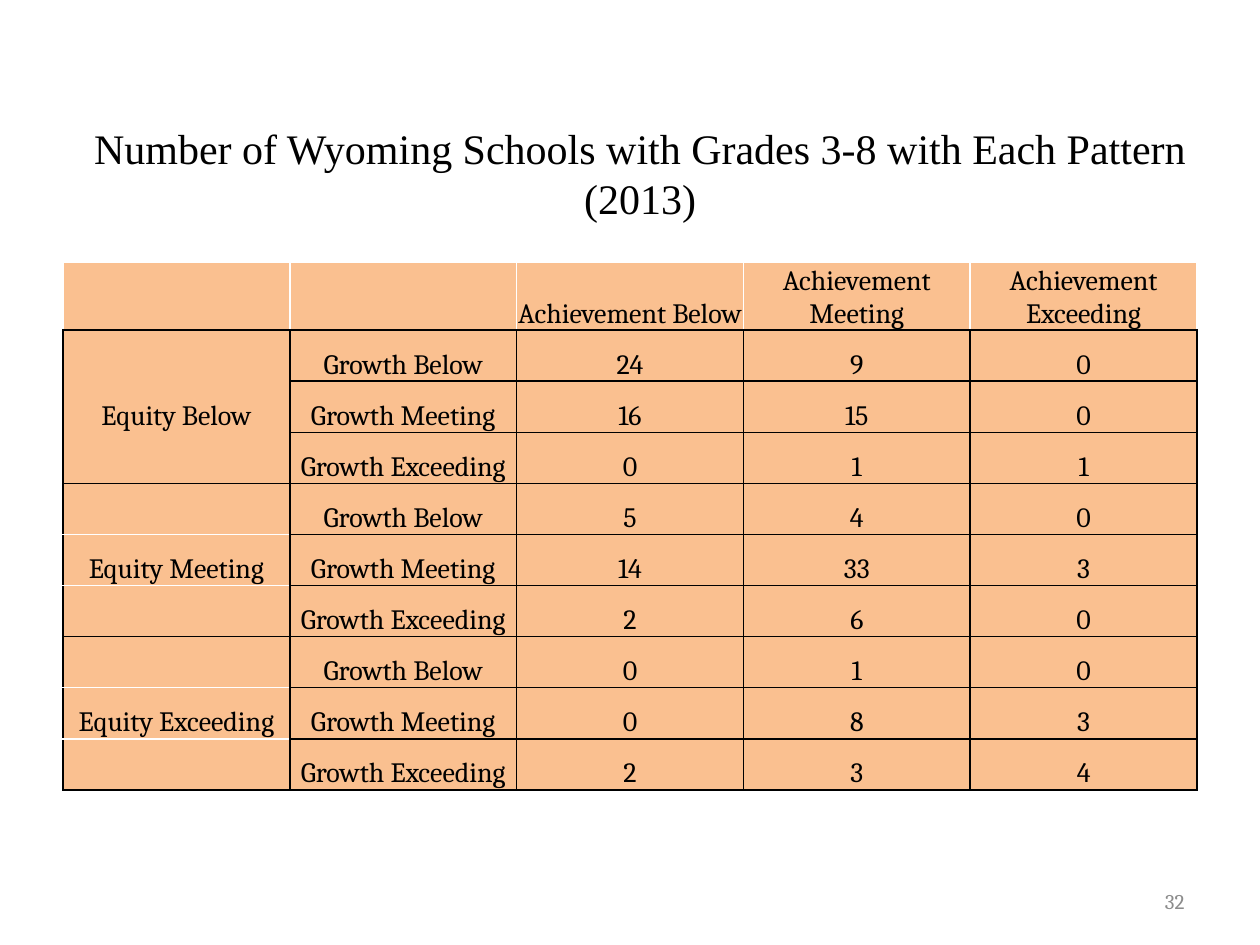
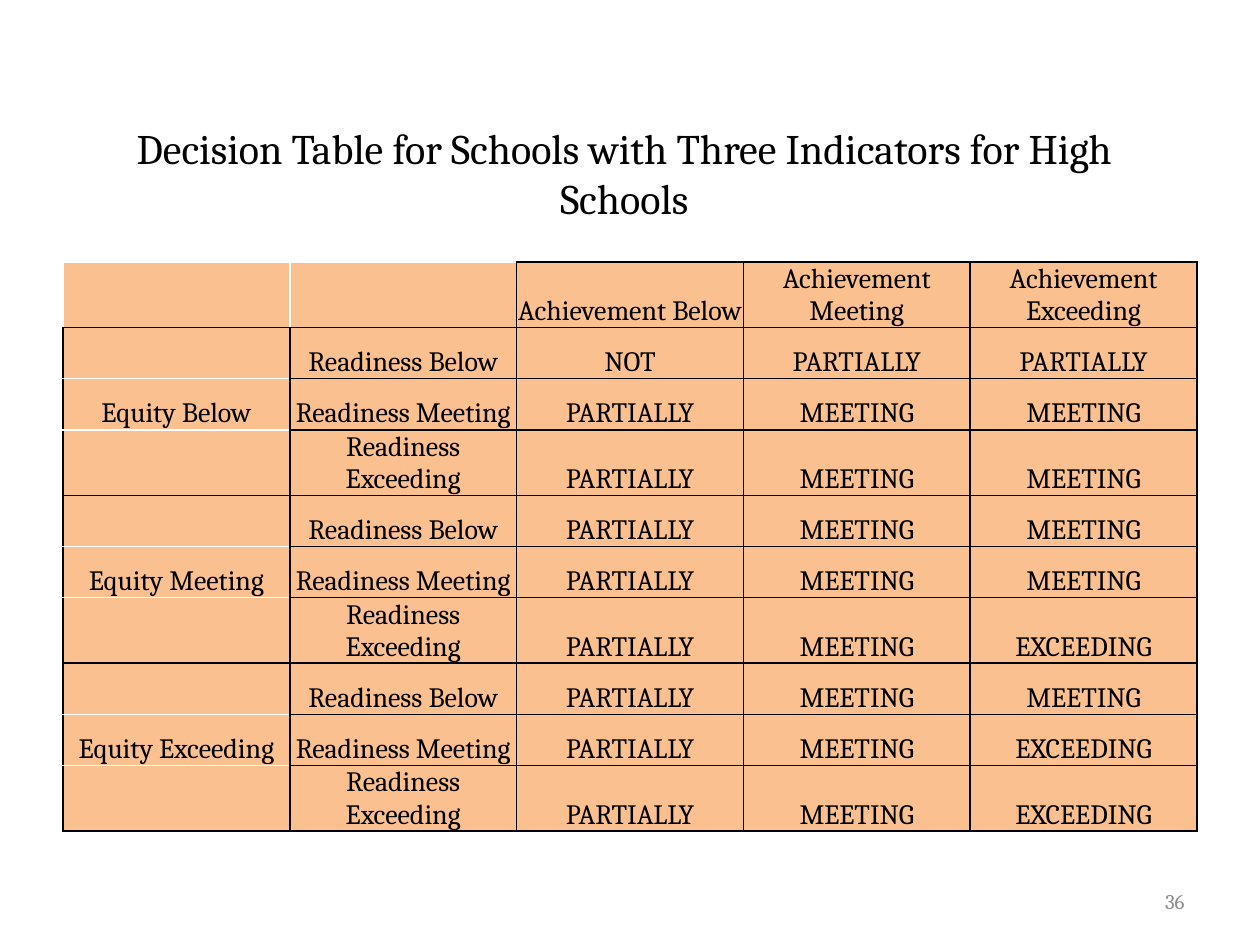
"""Build two slides of school performance tables."""
import pptx
import pptx.util
import pptx.dml.color
import pptx.enum.text
import pptx.oxml.ns
import lxml.etree

Inches, Pt = pptx.util.Inches, pptx.util.Pt
ALIGN = pptx.enum.text.PP_ALIGN
ANCHOR = pptx.enum.text.MSO_ANCHOR

HUES = {"ink": "000000", "line": "FFFFFF", "cell": "FAC090", "page": "8C8C8C"}
HEADS = ["", "", "Achievement Below", "Achievement Meeting", "Achievement Exceeding"]
LEVELS = ["Below", "Meeting", "Exceeding"]
NOT, PART, MEET, EXCEED = "NOT", "PARTIALLY", "MEETING", "EXCEEDING"

SLIDES = [
    {
        "title": "Number of Wyoming Schools with Grades 3-8 with Each Pattern (2013)",
        "font": "Times New Roman", "width": 9, "page": "32",
        "factor": "Growth", "head": 0.54, "tall": False,
        "open": 6, "inner": [None, "line", "line"],
        "values": [
            (24, 9, 0), (16, 15, 0), (0, 1, 1),
            (5, 4, 0), (14, 33, 3), (2, 6, 0),
            (0, 1, 0), (0, 8, 3), (2, 3, 4),
        ],
    },
    {
        "title": "Decision Table for Schools with Three Indicators for High Schools",
        "font": "Cambria", "width": 8.75, "page": "36",
        "factor": "Readiness", "head": 0.52, "tall": True,
        "open": 2, "inner": ["line", "line", "line"],
        "values": [
            (NOT, PART, PART), (PART, MEET, MEET), (PART, MEET, MEET),
            (PART, MEET, MEET), (PART, MEET, MEET), (PART, MEET, EXCEED),
            (PART, MEET, MEET), (PART, MEET, EXCEED), (PART, MEET, EXCEED),
        ],
    },
]

FRAME = {"vertical_anchor": ANCHOR.TOP, "word_wrap": True,
         "auto_size": pptx.enum.text.MSO_AUTO_SIZE.NONE}
CELL = {"vertical_anchor": ANCHOR.BOTTOM, "margin_left": Inches(0.01),
        "margin_right": Inches(0.01), "margin_top": Inches(0.01), "margin_bottom": 0}
PLAIN = {"first_row": False, "horz_banding": False}


def apply(item, form):
    for name, value in form.items():
        setattr(item, name, value)


def tint(name):
    return pptx.dml.color.RGBColor.from_string(HUES[name])


def write(frame, text, size, font="Cambria", hue="ink", align=ALIGN.CENTER):
    para = frame.paragraphs[0]
    para.alignment = align
    target = para
    if text:
        target = para.add_run()
        target.text = text
    apply(target.font, {"size": Pt(size), "name": font, "bold": False})
    target.font.color.rgb = tint(hue)


def place(shape, left, top, width, height):
    apply(shape, {"left": Inches(left), "top": Inches(top),
                  "width": Inches(width), "height": Inches(height)})


def edge(row, col, side, data):
    if row == 0:
        outer = side != "B" and col + (side == "R") < data["open"]
        return "line" if outer else "ink"
    group, step = divmod(row - 1, len(LEVELS))
    within = (side == "T" and step > 0) or (side == "B" and step < 2)
    return data["inner"][group] if col == 0 and within else "ink"


def rule(cell, side, hue):
    qn = pptx.oxml.ns.qn
    props = cell._tc.get_or_add_tcPr()
    line = lxml.etree.SubElement(props, qn(f"a:ln{side}"), w=str(Pt(1)))
    if hue is None:
        lxml.etree.SubElement(line, qn("a:noFill"))
        return
    fill = lxml.etree.SubElement(line, qn("a:solidFill"))
    lxml.etree.SubElement(fill, qn("a:srgbClr"), val=HUES[hue])


def grid(data):
    rows = [HEADS]
    for index, values in enumerate(data["values"]):
        group, step = divmod(index, len(LEVELS))
        label = f"Equity {LEVELS[group]}" if step == 1 else ""
        rows.append([label, f"{data['factor']} {LEVELS[step]}", *map(str, values)])
    return rows


def draw_table(slide, data):
    rows = grid(data)
    pace = Inches(3.65) // 9
    table = slide.shapes.add_table(len(rows), len(HEADS), Inches(0.5), Inches(2.08),
                                   Inches(9), pace * len(rows)).table
    apply(table, PLAIN)
    for row, texts in enumerate(rows):
        high = row == 0 or (data["tall"] and row % len(LEVELS) == 0)
        table.rows[row].height = Inches(data["head"]) if high else pace
        for col, text in enumerate(texts):
            cell = table.cell(row, col)
            apply(cell, CELL)
            write(cell.text_frame, text, 16)
            for side in "LRTB":
                rule(cell, side, edge(row, col, side, data))
            cell.fill.solid()
            cell.fill.fore_color.rgb = tint("cell")


def draw_slide(deck, data):
    slide = deck.slides.add_slide(deck.slide_layouts[5])
    draw_table(slide, data)
    title = slide.shapes.title
    place(title, 0.58, 0.92, data["width"], 0.91)
    apply(title.text_frame, FRAME)
    write(title.text_frame, data["title"], 24, data["font"])
    page = slide.shapes.add_textbox(0, 0, 0, 0)
    place(page, 7.17, 6.95, 2.33, 0.4)
    apply(page.text_frame, {**FRAME, "vertical_anchor": ANCHOR.MIDDLE})
    write(page.text_frame, data["page"], 12, hue="page", align=ALIGN.RIGHT)


def main():
    deck = pptx.Presentation()
    apply(deck, {"slide_width": Inches(10), "slide_height": Inches(7.5)})
    for data in SLIDES:
        draw_slide(deck, data)
    deck.save("out.pptx")


if __name__ == "__main__":
    main()
